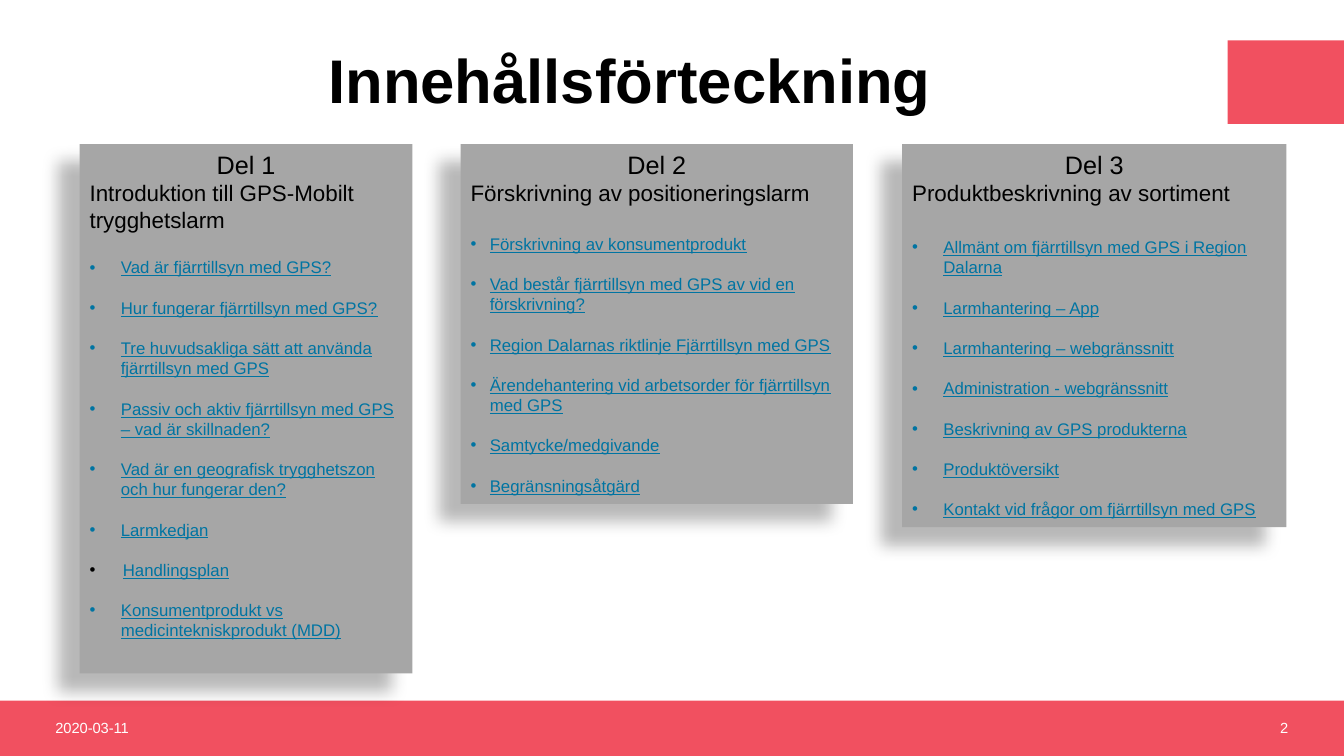
from lxml.etree import SubElement
from pptx import Presentation
from pptx.dml.color import RGBColor
from pptx.enum.shapes import MSO_SHAPE as Shape
from pptx.enum.text import MSO_ANCHOR as Anchor, PP_ALIGN as Align
from pptx.oxml.ns import qn
from pptx.util import Inches, Pt

RED, GREY, BLUE, BLACK, WHITE = "F15060", "A6A6A6", "0074A2", "000000", "FFFFFF"
CARDS = [
    {"left": 5.93, "width": 24.75, "height": 70, "indent": 0.31, "gap": 17.2,
     "heading": "Del 1", "subject": "Introduktion till GPS-Mobilt trygghetslarm",
     "topics": ["Vad är fjärrtillsyn med GPS?",
                "Hur fungerar fjärrtillsyn med GPS?",
                "Tre huvudsakliga sätt att använda fjärrtillsyn med GPS",
                "Passiv och aktiv fjärrtillsyn med GPS – vad är skillnaden?",
                "Vad är en geografisk trygghetszon och hur fungerar den?",
                "Larmkedjan", "Handlingsplan",
                "Konsumentprodukt vs medicintekniskprodukt (MDD)"]},
    {"left": 34.28, "width": 29.18, "height": 47.6, "indent": 0.19, "gap": 19.5,
     "heading": "Del 2", "subject": "Förskrivning av positioneringslarm",
     "topics": ["Förskrivning av konsumentprodukt",
                "Vad består fjärrtillsyn med GPS av vid en förskrivning?",
                "Region Dalarnas riktlinje Fjärrtillsyn med GPS",
                "Ärendehantering vid arbetsorder för fjärrtillsyn med GPS",
                "Samtycke/medgivande", "Begränsningsåtgärd"]},
    {"left": 67.13, "width": 28.58, "height": 50.67, "indent": 0.31, "gap": 22,
     "heading": "Del 3", "subject": "Produktbeskrivning av sortiment",
     "topics": ["Allmänt om fjärrtillsyn med GPS i Region Dalarna",
                "Larmhantering – App", "Larmhantering – webgränssnitt",
                "Administration - webgränssnitt",
                "Beskrivning av GPS produkterna", "Produktöversikt",
                "Kontakt vid frågor om fjärrtillsyn med GPS"]},
]


def color(value):
    """Turn a hex string into a colour."""
    return RGBColor.from_string(value)


class ContentsPage:
    """Style and current slide, with places given in percent of its size."""

    font = "Arial"
    topic_gap = 14.4

    def __init__(self, deck):
        """Add a title-only slide to the deck."""
        self.deck = deck
        self.page = deck.slides.add_slide(deck.slide_layouts[5])

    def place(self, left, top, width, height):
        """Convert percentages into slide lengths."""
        across, down = self.deck.slide_width / 100, self.deck.slide_height / 100
        return [int(part) for part in (left * across, top * down, width * across, height * down)]

    def format(self, para, size, ink, align=Align.LEFT, bold=False, underline=False):
        """Style a paragraph and its runs."""
        para.alignment = align
        for span in para.runs:
            span.font.name = self.font
            span.font.size = Pt(size)
            span.font.bold = bold
            span.font.underline = underline
            span.font.color.rgb = color(ink)

    def title(self, text, *place):
        """Fill and move the title placeholder."""
        box = self.page.shapes.title
        box.left, box.top, box.width, box.height = self.place(*place)
        box.text_frame.text = text
        box.text_frame.vertical_anchor = Anchor.MIDDLE
        para = box.text_frame.paragraphs[0]
        para.line_spacing = 0.9
        self.format(para, 44, BLACK, Align.CENTER, bold=True)

    def block(self, fill, *place):
        """Draw a plain filled rectangle."""
        box = self.page.shapes.add_shape(Shape.RECTANGLE, *self.place(*place))
        box.shadow.inherit = False
        box.fill.solid()
        box.fill.fore_color.rgb = color(fill)
        box.line.fill.background()
        return box

    def label(self, text, align, *place):
        """Write a small footer text."""
        box = self.page.shapes.add_textbox(*self.place(*place))
        frame = box.text_frame
        frame.word_wrap = True
        frame.vertical_anchor = Anchor.MIDDLE
        frame.text = text
        self.format(frame.paragraphs[0], 10.5, WHITE, align)

    def cast_shadow(self, box):
        """Give a box a soft shadow down to the left."""
        effects = box.element.spPr.find(qn("a:effectLst"))
        shadow = SubElement(effects, qn("a:outerShdw"), blurRad=str(Pt(11.8)),
                            dist=str(Pt(19.7)), dir=str(141 * 60000), algn="ctr", rotWithShape="0")
        tint = SubElement(shadow, qn("a:srgbClr"), val=BLACK)
        SubElement(tint, qn("a:alpha"), val="28000")

    def bullet(self, para, indent, ink):
        """Add a hanging bullet."""
        props = para._p.get_or_add_pPr()
        props.set("marL", str(Inches(indent)))
        props.set("indent", str(-Inches(indent)))
        SubElement(SubElement(props, qn("a:buClr")), qn("a:srgbClr"), val=ink)
        SubElement(props, qn("a:buFont"), typeface=self.font)
        SubElement(props, qn("a:buChar"), char="•")

    def card(self, left, width, height, indent, gap, heading, subject, topics):
        """Draw a part of the contents with its bulleted topics."""
        box = self.block(GREY, left, 19.07, width, height)
        self.cast_shadow(box)
        frame = box.text_frame
        frame.word_wrap = True
        frame.vertical_anchor = Anchor.TOP
        frame.text = "\n".join([heading, subject, *topics])
        first, second, *rest = frame.paragraphs
        self.format(first, 18, BLACK, Align.CENTER)
        self.format(second, 16, BLACK)
        for number, para in enumerate(rest):
            para.space_before = Pt(self.topic_gap if number else gap)
            plan = para.text == "Handlingsplan"
            self.bullet(para, 0.33 if plan else indent, BLACK if plan else BLUE)
            self.format(para, 12, BLUE, underline=True)


def main():
    """Build and save the contents slide."""
    deck = Presentation()
    deck.slide_width, deck.slide_height = Inches(13.33), Inches(7.5)
    contents = ContentsPage(deck)
    contents.block(RED, 0, 92.67, 100, 7.33)
    contents.block(RED, 91.35, 5.33, 8.65, 11.07)
    contents.title("Innehållsförteckning", 3.38, 5.33, 87, 11.33)
    contents.label("2020-03-11", Align.LEFT, 3.38, 92.67, 22.5, 7.2)
    contents.label("2", Align.RIGHT, 74.1, 92.67, 22.5, 7.2)
    for card in CARDS:
        contents.card(**card)
    deck.save("out.pptx")


if __name__ == "__main__":
    main()
